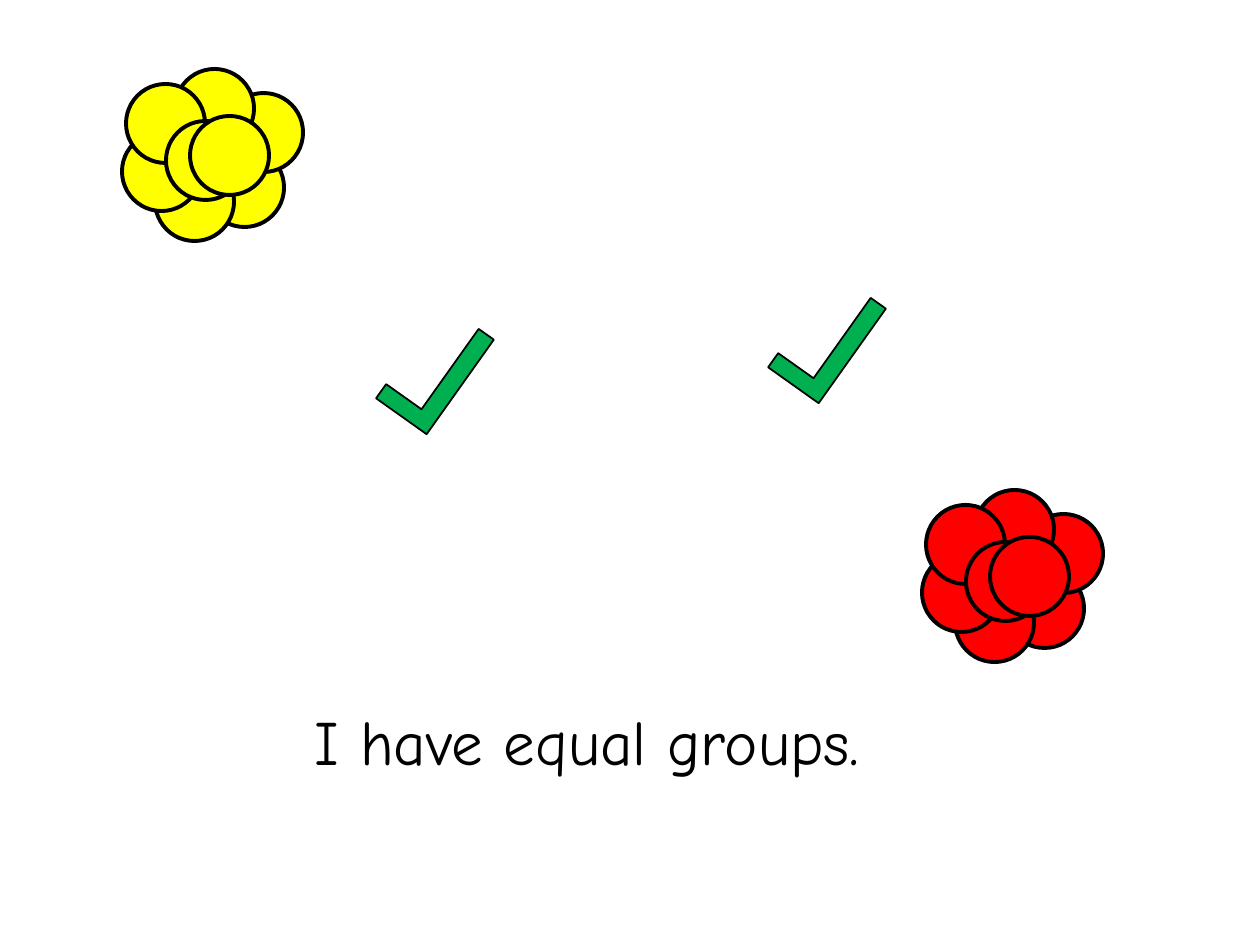
from typing import NamedTuple

import pptx
import pptx.dml.color
import pptx.enum.shapes
import pptx.enum.text
import pptx.util

SCALE = 914400 / 126  # EMU per px
COLORS = {"yellow": "FFFF00", "red": "FF0000", "green": "00B050", "black": "000000"}
KINDS = pptx.enum.shapes.MSO_SHAPE

# Balls of one flower, back to front, from its top left corner
BALL = 79
BALLS = [(83, 79), (102, 24), (53, 0), (33, 93), (0, 63), (4, 15), (44, 52), (68, 47)]


class Flower(NamedTuple):
    left: int
    top: int
    color: str


class Tick(NamedTuple):
    left: int
    top: int


FLOWERS = [Flower(122, 69, "yellow"), Flower(922, 490, "red")]
TICKS = [Tick(404, 311), Tick(796, 280)]


def px(value: int) -> int:
    return round(value * SCALE)


def shade(name: str) -> pptx.dml.color.RGBColor:
    return pptx.dml.color.RGBColor.from_string(COLORS[name])


def draw_shape(shapes, kind, box: tuple, color: str, width: float):
    shape = shapes.add_shape(kind, *map(px, box))
    shape.shadow.inherit = False
    shape.fill.solid()
    shape.fill.fore_color.rgb = shade(color)
    shape.line.color.rgb = shade("black")
    shape.line.width = pptx.util.Pt(width)
    return shape


def draw_flower(slide, flower: Flower) -> None:
    group = slide.shapes.add_group_shape()
    for x, y in BALLS:
        box = (flower.left + x, flower.top + y, BALL, BALL)
        draw_shape(group.shapes, KINDS.OVAL, box, flower.color, 2.25)


def draw_tick(slide, tick: Tick) -> None:
    box = (tick.left, tick.top, 62, 116)
    shape = draw_shape(slide.shapes, KINDS.CORNER, box, "green", 1)
    shape.adjustments[0] = 0.28
    shape.adjustments[1] = 0.3
    shape.rotation = 35.4
    shape.element.spPr.get_or_add_xfrm().set("flipH", "1")


def draw_text(slide, box: tuple, text: str) -> None:
    frame = slide.shapes.add_textbox(*map(px, box)).text_frame
    frame.word_wrap = True
    frame.auto_size = pptx.enum.text.MSO_AUTO_SIZE.SHAPE_TO_FIT_TEXT
    line = frame.paragraphs[0]
    line.alignment = pptx.enum.text.PP_ALIGN.CENTER
    run = line.add_run()
    run.text = text
    run.font.name = "Comic Neue"
    run.font.size = pptx.util.Pt(36)
    run.font.color.rgb = shade("black")


def main() -> None:
    deck = pptx.Presentation()
    deck.slide_width, deck.slide_height = px(1260), px(945)
    slide = deck.slides.add_slide(deck.slide_layouts[6])

    # Sentence
    draw_text(slide, (103, 696, 968, 89), "I have equal groups.")

    # Two equal groups
    for flower in FLOWERS:
        draw_flower(slide, flower)

    # Check marks
    for tick in TICKS:
        draw_tick(slide, tick)

    deck.save("out.pptx")


if __name__ == "__main__":
    main()
